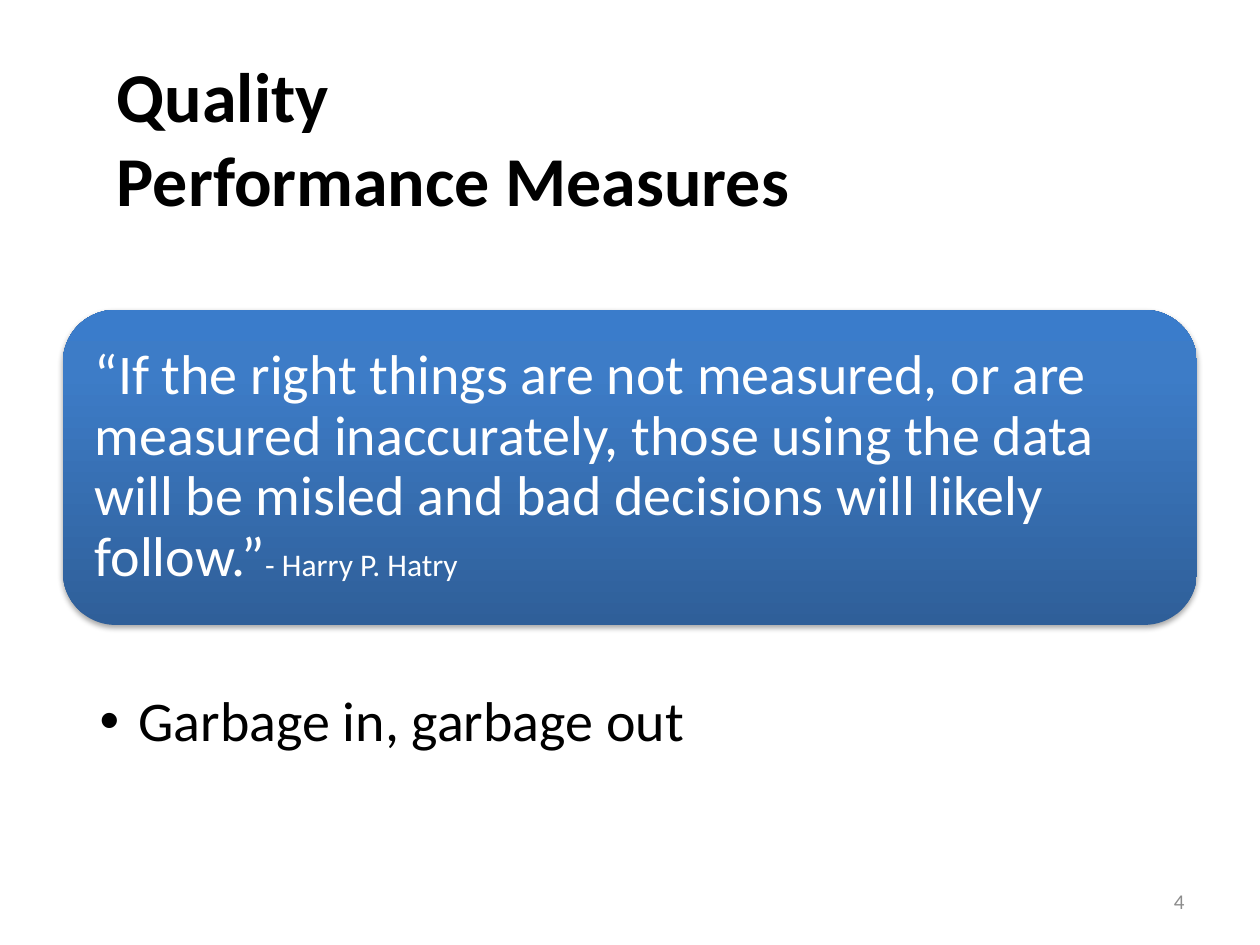
from typing import NamedTuple

from lxml import etree
from pptx import Presentation
from pptx import util as u
from pptx.dml.color import RGBColor
from pptx.enum import shapes, text
from pptx.oxml import parse_xml
from pptx.oxml.ns import nsdecls, qn

PX = 9144  # EMU per px, 100 px to the inch
FONT = "Calibri"
COLORS = {
    "ink": "000000",
    "quote": "FFFFFF",
    "number": "8C8C8C",
    "panel_bottom": "2F5F99",
    "panel_middle": "3D7CC7",
    "panel_top": "3A7CCB",
    "shadow": "000000",
}


class Area(NamedTuple):
    left: int
    top: int
    width: int
    height: int

    def emu(self) -> list[u.Emu]:
        return [u.Emu(side * PX) for side in self]


class Insets(NamedTuple):
    left: int = 10
    top: int = 5
    right: int = 10
    bottom: int = 5


def add_span(para, words: str, *, size: int, color: str, bold: bool = False) -> None:
    span = para.add_run()
    span.text = words
    span.font.name = FONT
    span.font.size = u.Pt(size)
    span.font.bold = bold
    span.font.color.rgb = RGBColor.from_string(COLORS[color])


def first_para(shape, *, insets: Insets = Insets(), anchor=text.MSO_ANCHOR.MIDDLE,
               align=text.PP_ALIGN.LEFT, spacing: float = 1.0):
    """Set up the text frame of a shape and return its first paragraph."""
    frame = shape.text_frame
    frame.word_wrap = True
    frame.vertical_anchor = anchor
    frame.margin_left, frame.margin_top, frame.margin_right, frame.margin_bottom = (
        u.Emu(inset * PX) for inset in insets)
    para = frame.paragraphs[0]
    para.alignment = align
    para.line_spacing = spacing
    return para


def add_bullet(para, indent: int) -> None:
    props = para._p.get_or_add_pPr()
    props.set("marL", str(indent * PX))
    props.set("indent", str(-indent * PX))
    etree.SubElement(props, qn("a:buFont")).set("typeface", "Arial")
    etree.SubElement(props, qn("a:buChar")).set("char", "•")


def add_panel(page, area: Area):
    """Add a rounded panel with a vertical gradient and a soft shadow."""
    panel = page.shapes.add_shape(shapes.MSO_SHAPE.ROUNDED_RECTANGLE, *area.emu())
    panel.line.fill.background()
    stops = ((0, "panel_bottom"), (80, "panel_middle"), (100, "panel_top"))
    stop_xml = "".join(
        f'<a:gs pos="{place * 1000}"><a:srgbClr val="{COLORS[name]}"/></a:gs>'
        for place, name in stops)
    gradient = parse_xml(
        f'<a:gradFill {nsdecls("a")} rotWithShape="1"><a:gsLst>{stop_xml}</a:gsLst>'
        '<a:lin ang="16200000" scaled="0"/></a:gradFill>')
    shadow = parse_xml(
        f'<a:effectLst {nsdecls("a")}><a:outerShdw blurRad="{u.Pt(3.1)}" '
        f'dist="{u.Pt(1.8)}" dir="5400000" rotWithShape="0">'
        f'<a:srgbClr val="{COLORS["shadow"]}"><a:alpha val="35000"/></a:srgbClr>'
        '</a:outerShdw></a:effectLst>')
    props = panel._element.spPr
    props.find(qn("a:prstGeom")).addnext(gradient)
    props.append(shadow)
    return panel


def main() -> None:
    deck = Presentation()
    deck.slide_width, deck.slide_height = u.Inches(10), u.Inches(7.5)
    page = deck.slides.add_slide(deck.slide_layouts[6])

    title = page.shapes.add_textbox(*Area(83, 46, 867, 125).emu())
    para = first_para(title)
    add_span(para, "Quality", size=40, color="ink", bold=True)
    para.add_line_break()
    add_span(para, "Performance Measures", size=40, color="ink", bold=True)

    panel = add_panel(page, Area(50, 246, 900, 250))
    para = first_para(panel, insets=Insets(13, 13, 13, 13), spacing=0.9)
    add_span(para, "“If the right things are not measured, or are measured inaccurately, "
             "those using the data will be misled and bad decisions will likely follow.”",
             size=32, color="quote")
    add_span(para, "- Harry P. Hatry", size=18, color="quote")

    points = page.shapes.add_textbox(*Area(50, 546, 900, 60).emu())
    para = first_para(points, insets=Insets(29, 4, 25, 4),
                      anchor=text.MSO_ANCHOR.TOP, spacing=0.9)
    add_bullet(para, 31)
    add_span(para, "Garbage in, garbage out", size=32, color="ink")

    number = page.shapes.add_textbox(*Area(717, 695, 233, 40).emu())
    para = first_para(number, align=text.PP_ALIGN.RIGHT)
    add_span(para, "4", size=12, color="number")

    deck.save("out.pptx")


if __name__ == "__main__":
    main()
